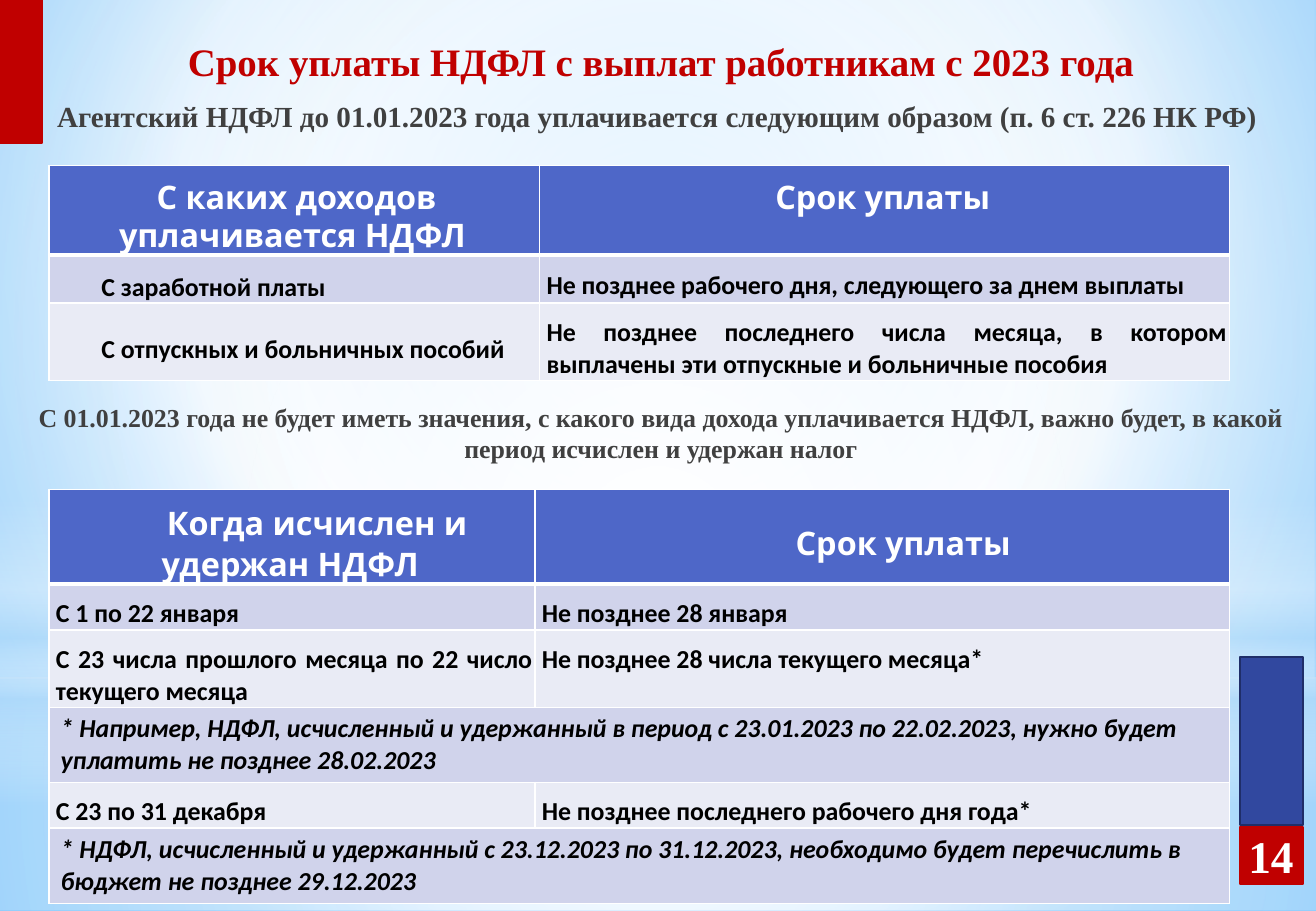
from dataclasses import dataclass

from lxml.etree import SubElement
from pptx import Presentation
from pptx.dml.color import RGBColor
from pptx.enum.shapes import MSO_SHAPE
from pptx.enum.text import MSO_ANCHOR, PP_ALIGN
from pptx.oxml.ns import qn
from pptx.util import Emu, Pt

SCALE = 9144  # EMU in one px, 100 px to the inch
WIDE = 1129
PAGE = (Pt(813), Pt(563))
COLORS = {
    "white": "FFFFFF", "black": "000000", "gray": "404040", "red": "C00000",
    "navy": "31489F", "edge": "1F2E69", "head": "4E67C8",
    "band": "D0D3EB", "pale": "E9EBF5",
    "sky": "9ED5FF", "deep": "5BB9FF", "mist": "B4DCFA",
}
LEFT, MID, BOTH = PP_ALIGN.LEFT, PP_ALIGN.CENTER, PP_ALIGN.JUSTIFY
TOP, HALF = MSO_ANCHOR.TOP, MSO_ANCHOR.MIDDLE
SERIF = "Times New Roman"
Box = tuple[int, int, int, int]


@dataclass
class Grad:
    stops: list[tuple[int, str, int]]  # place, colour, opacity in percent
    focus: Box | None = (50, 50, 50, 50)  # None makes it run top to bottom


@dataclass
class Glow:
    kind: MSO_SHAPE
    box: Box
    grad: Grad


@dataclass
class Block:
    box: Box
    fill: str
    line: str


@dataclass
class Line:
    text: str
    size: int
    color: str
    font: str = SERIF
    align: PP_ALIGN = MID
    italic: bool = False
    inset: int = 0
    indent: int = 0
    before: int = 0
    after: float = 0
    lead: float | None = None


@dataclass
class Label:
    box: Box
    lines: list[Line]
    anchor: MSO_ANCHOR = TOP


@dataclass
class Cell:
    text: str
    align: PP_ALIGN = LEFT
    indent: int = 0
    anchor: MSO_ANCHOR = HALF
    note: bool = False  # an italic remark across the whole row


@dataclass
class Grid:
    left: int
    top: int
    cols: list[int]
    rows: list[int]
    cells: list[list[Cell]]


BACK = Grad([(0, "sky", 100), (60, "white", 100), (100, "deep", 100)],
            (20, 10, 20, 60))
GLOWS = [
    Glow(MSO_SHAPE.RECTANGLE, (0, 582, WIDE, 200),
         Grad([(0, "white", 91), (37, "white", 76), (100, "mist", 79)])),
    Glow(MSO_SHAPE.RECTANGLE, (0, 0, WIDE, 582),
         Grad([(0, "white", 89), (48, "white", 62), (100, "mist", 79)])),
    Glow(MSO_SHAPE.RECTANGLE, (0, 430, WIDE, 261),
         Grad([(0, "white", 0), (29, "white", 30), (45, "mist", 40),
               (55, "white", 26), (65, "mist", 60), (100, "white", 0)], None)),
    Glow(MSO_SHAPE.OVAL, (0, 182, WIDE, 582),
         Grad([(0, "white", 100), (56, "white", 0)])),
]
BLOCKS = [
    Block((1064, 564, 54, 144), "navy", "edge"),
    Block((1064, 710, 54, 49), "red", "red"),
    Block((0, 0, 36, 123), "red", "red"),
]
GRIDS = [
    Grid(42, 420, [417, 596], [80, 39, 66, 64, 39, 65], [
        [Cell("Когда исчислен и удержан НДФЛ ", MID, 39),
         Cell("Срок уплаты ", MID, 39)],
        [Cell("С 1 по 22 января"), Cell("Не позднее 28 января")],
        [Cell("С 23 числа прошлого месяца по 22 число текущего месяца ", BOTH),
         Cell("Не позднее 28 числа текущего месяца*", anchor=TOP)],
        [Cell("* Например, НДФЛ, исчисленный и удержанный в период с 23.01.2023 "
              "по 22.02.2023, нужно будет уплатить не позднее 28.02.2023",
              anchor=TOP, note=True)],
        [Cell("С 23 по 31 декабря", anchor=TOP),
         Cell("Не позднее последнего рабочего дня года*")],
        [Cell("* НДФЛ, исчисленный и удержанный с 23.12.2023 по 31.12.2023, "
              "необходимо будет перечислить в бюджет не позднее 29.12.2023",
              anchor=TOP, note=True)],
    ]),
    Grid(42, 142, [421, 592], [77, 41, 66], [
        [Cell("С каких доходов уплачивается НДФЛ ", MID),
         Cell("Срок уплаты ", MID, anchor=TOP)],
        [Cell("С заработной платы", indent=39),
         Cell("Не позднее рабочего дня, следующего за днем выплаты")],
        [Cell("С отпускных и больничных пособий", indent=39),
         Cell("Не позднее последнего числа месяца, в котором выплачены "
              "эти отпускные и больничные пособия ", BOTH)],
    ]),
]
LABELS = [
    Label((0, 27, WIDE, 96), [
        Line("Срок уплаты НДФЛ с выплат работникам с 2023 года", 24, "red",
             inset=5, before=5, after=3.3),
        Line("Агентский НДФЛ до 01.01.2023 года уплачивается следующим образом "
             "(п. 6 ст. 226 НК РФ) ", 18, "gray", inset=5, before=6, after=3.3),
    ]),
    Label((0, 340, WIDE, 66), [
        Line("С 01.01.2023 года не будет иметь значения, с какого вида дохода "
             "уплачивается НДФЛ, важно будет, в какой период исчислен "
             "и удержан налог", 16, "gray", inset=5, before=3, after=3.3),
    ]),
    Label((1059, 697, 63, 75), [Line("14", 28, "white")], HALF),
]


def px(num: int) -> Emu:
    return Emu(num * SCALE)


def rgb(name: str) -> RGBColor:
    return RGBColor.from_string(COLORS[name])


def shade(owner, grad: Grad) -> None:
    """Swap the solid fill of an element for a gradient."""
    solid = owner.find(qn("a:solidFill"))
    fill = SubElement(owner, qn("a:gradFill"), rotWithShape="1")
    owner.replace(solid, fill)
    stops = SubElement(fill, qn("a:gsLst"))
    for place, name, alpha in grad.stops:
        stop = SubElement(stops, qn("a:gs"), pos=str(place * 1000))
        color = SubElement(stop, qn("a:srgbClr"), val=COLORS[name])
        SubElement(color, qn("a:alpha"), val=str(alpha * 1000))
    if grad.focus is None:
        SubElement(fill, qn("a:lin"), ang="5400000", scaled="0")
    else:
        way = SubElement(fill, qn("a:path"), path="circle")
        sides = {k: str(v * 1000) for k, v in zip("ltrb", grad.focus)}
        SubElement(way, qn("a:fillToRect"), sides)


def draw_shape(slide, kind: MSO_SHAPE, box: Box, fill: str):
    shape = slide.shapes.add_shape(kind, *map(px, box))
    shape.shadow.inherit = False
    shape.fill.solid()
    shape.fill.fore_color.rgb = rgb(fill)
    return shape


def write(frame, lines: list[Line]) -> None:
    for num, line in enumerate(lines):
        para = frame.add_paragraph() if num else frame.paragraphs[0]
        para.alignment = line.align
        para.space_before, para.space_after = Pt(line.before), Pt(line.after)
        para.line_spacing = line.lead
        props = para._p.get_or_add_pPr()
        props.set("marL", str(px(line.inset)))
        props.set("indent", str(px(line.indent)))
        run = para.add_run()
        run.text = line.text
        font = run.font
        font.name, font.size = line.font, Pt(line.size)
        font.bold, font.italic = True, line.italic
        font.color.rgb = rgb(line.color)


def edge(cell, row: int) -> None:
    """White borders, thick between the head and the body."""
    props = cell._tc.get_or_add_tcPr()
    for num, side in enumerate("LRTB"):
        thick = (row, side) in ((0, "B"), (1, "T"))
        line = SubElement(props, qn("a:ln" + side), w=str(Pt(3 if thick else 1)))
        props.insert(num, line)
        fill = SubElement(line, qn("a:solidFill"))
        SubElement(fill, qn("a:srgbClr"), val=COLORS["white"])


def draw_grid(slide, grid: Grid) -> None:
    box = (grid.left, grid.top, sum(grid.cols), sum(grid.rows))
    table = slide.shapes.add_table(len(grid.rows), len(grid.cols),
                                   *map(px, box)).table
    for col, width in zip(table.columns, grid.cols):
        col.width = px(width)
    for num, (height, cells) in enumerate(zip(grid.rows, grid.cells)):
        table.rows[num].height = px(height)
        for col in range(len(grid.cols)):
            spot = table.cell(num, col)
            spot.fill.solid()
            tint = "head" if num == 0 else "band" if num % 2 else "pale"
            spot.fill.fore_color.rgb = rgb(tint)
            edge(spot, num)
        for col, cell in enumerate(cells):
            spot = table.cell(num, col)
            spot.vertical_anchor = cell.anchor
            if cell.note:
                spot.merge(table.cell(num, len(grid.cols) - 1))
            else:
                spot.margin_left, spot.margin_top = px(6), px(12)
                spot.margin_right, spot.margin_bottom = px(2), px(0)
            look = (16, "black", "Calibri") if num else (20, "white", "Karla")
            write(spot.text_frame, [Line(
                cell.text, *look, cell.align, cell.note, indent=cell.indent,
                lead=1.07 if cell.indent else None)])


def draw_label(slide, label: Label) -> None:
    frame = slide.shapes.add_textbox(*map(px, label.box)).text_frame
    frame.word_wrap = True
    frame.vertical_anchor = label.anchor
    write(frame, label.lines)


def main() -> None:
    deck = Presentation()
    deck.slide_width, deck.slide_height = PAGE
    slide = deck.slides.add_slide(deck.slide_layouts[6])

    # Background and soft light
    slide.background.fill.solid()
    slide.background.fill.fore_color.rgb = rgb("white")
    shade(slide.element.find(".//" + qn("p:bgPr")), BACK)
    for glow in GLOWS:
        shape = draw_shape(slide, glow.kind, glow.box, "white")
        shape.line.fill.background()
        shade(shape._element.spPr, glow.grad)

    # Side blocks
    for block in BLOCKS:
        shape = draw_shape(slide, MSO_SHAPE.RECTANGLE, block.box, block.fill)
        shape.line.color.rgb = rgb(block.line)
        shape.line.width = Pt(1.25)

    # Tables, headings and page number
    for grid in GRIDS:
        draw_grid(slide, grid)
    for label in LABELS:
        draw_label(slide, label)
    deck.save("out.pptx")


if __name__ == "__main__":
    main()
